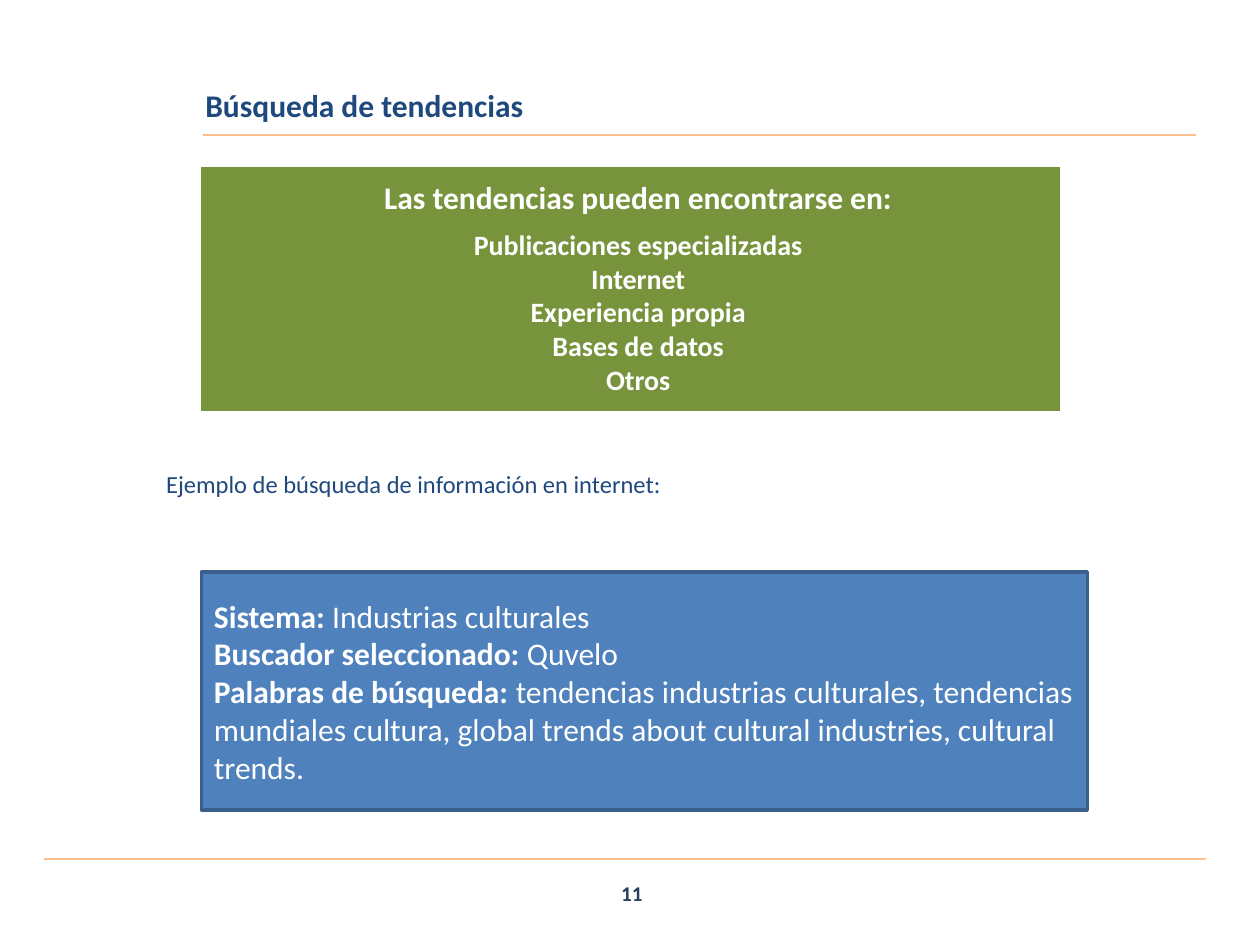
from dataclasses import dataclass
from typing import Optional

from lxml.etree import SubElement
from pptx import Presentation
from pptx.dml.color import RGBColor
from pptx.enum.shapes import MSO_CONNECTOR, MSO_SHAPE
from pptx.enum.text import MSO_ANCHOR, PP_ALIGN
from pptx.oxml.ns import qn
from pptx.util import Emu, Inches, Pt

# Grid of 100 columns by 75 rows
CELL = Inches(10) // 100
FONT = "Calibri"
WHITE = RGBColor(0xFF, 0xFF, 0xFF)
NAVY = RGBColor(0x1F, 0x49, 0x7D)
DARK_NAVY = RGBColor(0x25, 0x40, 0x61)
ORANGE = RGBColor(0xFA, 0xC0, 0x90)
GREEN = RGBColor(0x77, 0x93, 0x3C)
BLUE = RGBColor(0x4F, 0x81, 0xBD)
BLUE_EDGE = RGBColor(0x3A, 0x5F, 0x8C)


@dataclass(frozen=True)
class Area:
    column: float
    row: float
    columns: float
    rows: float

    def lengths(self) -> tuple:
        return tuple(grid(n) for n in (self.column, self.row, self.columns, self.rows))


@dataclass(frozen=True)
class Run:
    text: str
    size: int
    color: RGBColor = WHITE
    bold: bool = True


@dataclass(frozen=True)
class Line:
    runs: tuple
    align: PP_ALIGN = PP_ALIGN.LEFT
    before: float = 0
    after: float = 0
    spacing: Optional[float] = None


def grid(cells: float) -> Emu:
    return Emu(round(cells * CELL))


def write(shape, lines: list, anchor: MSO_ANCHOR = MSO_ANCHOR.MIDDLE,
          inset: Optional[float] = None) -> None:
    frame = shape.text_frame
    frame.word_wrap = True
    frame.vertical_anchor = anchor
    if inset is not None:
        frame.margin_left = frame.margin_right = grid(inset)
        frame.margin_top = frame.margin_bottom = grid(inset)
    for index, line in enumerate(lines):
        paragraph = frame.add_paragraph() if index else frame.paragraphs[0]
        paragraph.alignment = line.align
        paragraph.space_before = Pt(line.before)
        paragraph.space_after = Pt(line.after)
        paragraph.line_spacing = line.spacing
        for part in line.runs:
            run = paragraph.add_run()
            run.text = part.text
            run.font.name = FONT
            run.font.size = Pt(part.size)
            run.font.bold = part.bold
            run.font.color.rgb = part.color


def add_text(slide, area: Area, lines: list, **options):
    shape = slide.shapes.add_textbox(*area.lengths())
    write(shape, lines, **options)
    return shape


def add_panel(slide, area: Area, fill: RGBColor, edge: RGBColor):
    shape = slide.shapes.add_shape(MSO_SHAPE.RECTANGLE, *area.lengths())
    shape.shadow.inherit = False
    shape.fill.solid()
    shape.fill.fore_color.rgb = fill
    shape.line.color.rgb = edge
    shape.line.width = Pt(2)
    return shape


def add_rule(slide, start: float, end: float, row: float) -> None:
    rule = slide.shapes.add_connector(
        MSO_CONNECTOR.STRAIGHT, grid(start), grid(row), grid(end), grid(row))
    rule.line.color.rgb = ORANGE
    rule.line.width = Pt(1.25)
    SubElement(rule._element.spPr, qn("a:effectLst"))


def main() -> None:
    presentation = Presentation()
    presentation.slide_width = grid(100)
    presentation.slide_height = grid(75)
    slide = presentation.slides.add_slide(presentation.slide_layouts[5])

    # Title and rules
    title = slide.shapes.title
    title.left, title.top, title.width, title.height = Area(15.3, 6, 81.1, 4.7).lengths()
    write(title, [Line((Run("Búsqueda de tendencias", 18, NAVY),), before=3.6)])
    add_rule(slide, 16.1, 94.9, 10.7)
    add_rule(slide, 3.5, 95.7, 68.2)

    # Where trends are found
    add_panel(slide, Area(15.8, 13.1, 68.5, 19.7), GREEN, WHITE)
    sources = ("Publicaciones especializadas", "Internet", "Experiencia propia",
               "Bases de datos", "Otros")
    heading = Line((Run("Las tendencias pueden encontrarse en:", 18),),
                   PP_ALIGN.CENTER, after=6.3, spacing=0.9)
    add_text(slide, Area(16.4, 13.1, 68.5, 19.7),
             [heading] + [Line((Run(source, 16),), PP_ALIGN.CENTER) for source in sources],
             inset=0.5)

    # Search example
    add_text(slide, Area(12.2, 36.7, 72.4, 3.4),
             [Line((Run("Ejemplo de búsqueda de información en internet:", 14, NAVY, False),))],
             anchor=MSO_ANCHOR.TOP)
    details = (
        ("Sistema: ", "Industrias culturales"),
        ("Buscador seleccionado: ", "Quvelo"),
        ("Palabras de búsqueda: ",
         "tendencias industrias culturales, tendencias mundiales cultura, "
         "global trends about cultural industries, cultural trends."),
    )
    example = add_panel(slide, Area(16, 45.4, 70.3, 18.9), BLUE, BLUE_EDGE)
    write(example, [Line((Run(label, 18), Run(value, 18, bold=False)))
                    for label, value in details])

    # Page number
    add_text(slide, Area(38.5, 68.9, 23.3, 4),
             [Line((Run("11", 12, DARK_NAVY),), PP_ALIGN.CENTER)])

    presentation.save("out.pptx")


if __name__ == "__main__":
    main()
